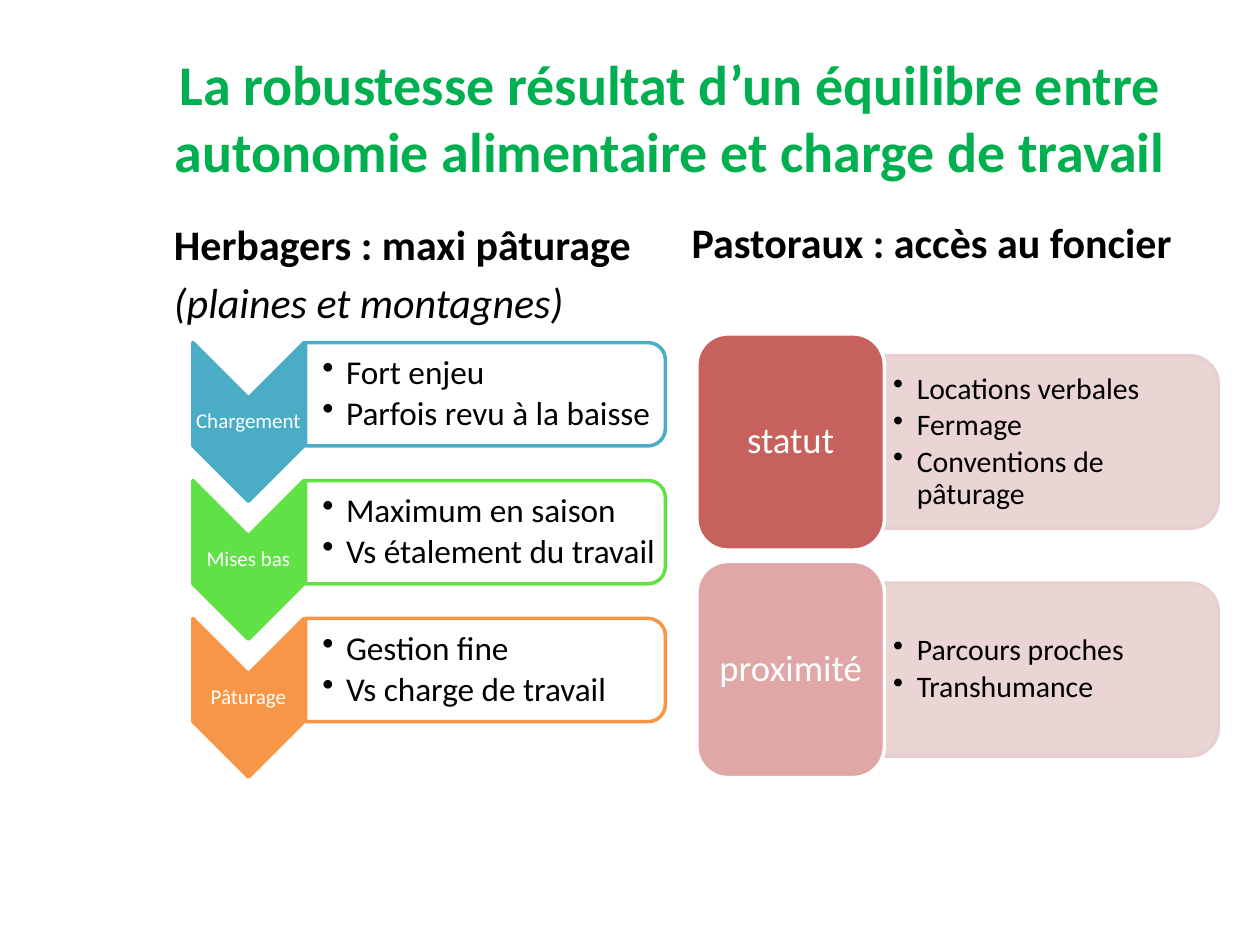
import pptx
import pptx.dml.color
import pptx.enum.shapes
import pptx.enum.text
import pptx.oxml
import pptx.oxml.ns
import pptx.util
from lxml import etree

Pt = pptx.util.Pt
SHAPE = pptx.enum.shapes.MSO_SHAPE
ALIGN = pptx.enum.text.PP_ALIGN
ANCHOR = pptx.enum.text.MSO_ANCHOR

FONT = "Calibri"
COLORS = {
    "title": "00B050", "text": "000000", "white": "FFFFFF",
    "stocking": "4BACC6", "lambing": "60E146", "grazing": "F79646",
    "card": "C0504D", "panel": "E8D0D0",
}
GRAZING_STEPS = [
    ("Chargement", "stocking", ["Fort enjeu", "Parfois revu à la baisse"]),
    ("Mises bas", "lambing", ["Maximum en saison", "Vs étalement du travail"]),
    ("Pâturage", "grazing", ["Gestion fine", "Vs charge de travail"]),
]
LAND_CARDS = [
    ("statut", 90, ["Locations verbales", "Fermage", "Conventions de pâturage"]),
    ("proximité", 50, ["Parcours proches", "Transhumance"]),
]


def rgb(name):
    return pptx.dml.color.RGBColor.from_string(COLORS[name])


def place(shape, left, top, width, height):
    shape.left, shape.top = Pt(left), Pt(top)
    shape.width, shape.height = Pt(width), Pt(height)


def add_run(paragraph, text, size, color, bold=False, italic=False):
    run = paragraph.add_run()
    run.text = text
    font = run.font
    font.name, font.size = FONT, Pt(size)
    font.bold, font.italic = bold, italic
    font.color.rgb = rgb(color)


def set_frame(shape, insets, anchor=ANCHOR.MIDDLE):
    """Turn on wrapping and set left, top, right and bottom insets."""
    frame = shape.text_frame
    frame.word_wrap = True
    frame.auto_size = pptx.enum.text.MSO_AUTO_SIZE.NONE
    frame.vertical_anchor = anchor
    (frame.margin_left, frame.margin_top,
     frame.margin_right, frame.margin_bottom) = [Pt(inset) for inset in insets]
    return frame


def add_block(shapes, kind, box, fill, line, alpha=100, quarter_turn=False):
    """Draw a preset shape that fills the box, even when turned by 90 degrees."""
    left, top, width, height = box
    if quarter_turn:
        shift = (width - height) / 2
        box = (left + shift, top - shift, height, width)
    shape = shapes.add_shape(kind, *[Pt(length) for length in box])
    shape.rotation = 90 if quarter_turn else 0
    shape.shadow.inherit = False
    shape.fill.solid()
    shape.fill.fore_color.rgb = rgb(fill)
    if alpha < 100:
        color = shape.fill._xPr.find(".//" + pptx.oxml.ns.qn("a:srgbClr"))
        etree.SubElement(color, pptx.oxml.ns.qn("a:alpha"), val=str(alpha * 1000))
    shape.line.color.rgb = rgb(line)
    shape.line.width = Pt(2)
    return shape


def write_label(shape, text, size, insets):
    paragraph = set_frame(shape, insets).paragraphs[0]
    paragraph.alignment = ALIGN.CENTER
    paragraph.line_spacing = 0.9
    add_run(paragraph, text, size, "white")


def add_bullets(shapes, box, items, size, insets):
    frame = set_frame(shapes.add_textbox(*[Pt(length) for length in box]), insets)
    for index, item in enumerate(items):
        paragraph = frame.add_paragraph() if index else frame.paragraphs[0]
        properties = paragraph._p.get_or_add_pPr()
        properties.set("marL", str(Pt(13.5)))
        properties.set("indent", str(-Pt(13.5)))
        etree.SubElement(properties, pptx.oxml.ns.qn("a:buChar"), char="•")
        paragraph.line_spacing = 0.9
        paragraph.space_after = Pt(round(size * 0.15, 2))
        add_run(paragraph, item, size, "text")


def fill_title(title):
    place(title, 82, 21.6, 602, 90)
    paragraph = set_frame(title, (7.2, 3.6, 7.2, 3.6)).paragraphs[0]
    paragraph.alignment = ALIGN.CENTER
    add_run(paragraph, "La robustesse résultat d’un équilibre entre "
            "autonomie alimentaire et charge de travail", 32, "title", bold=True)


def fill_heading(placeholder, box, heading, note=None):
    place(placeholder, *box)
    frame = set_frame(placeholder, (7.2, 3.6, 7.2, 3.6), ANCHOR.TOP)
    paragraph = frame.paragraphs[0]
    paragraph.space_before = Pt(0)
    add_run(paragraph, heading, 24, "text", bold=True)
    if note:
        paragraph = frame.add_paragraph()
        paragraph.space_before = Pt(4.8)
        add_run(paragraph, note, 24, "text", italic=True)


def add_grazing_steps(slide, left, top, width):
    """Stack chevrons, each with an outlined list on its right."""
    shapes = slide.shapes.add_group_shape().shapes
    chevron_width, chevron_height, bar_height, pitch = 63.5, 90.7, 59, 78.8
    for index, (label, color, items) in enumerate(GRAZING_STEPS):
        y = top + index * pitch
        add_block(shapes, SHAPE.CHEVRON, (left, y, chevron_width, chevron_height),
                  color, color, quarter_turn=True)
        label_box = shapes.add_textbox(Pt(left), Pt(y + chevron_width / 2),
                                       Pt(chevron_width), Pt(27.2))
        write_label(label_box, label, 12, (0.6, 0.6, 0.6, 0.6))
        bar_left, bar_width = left + chevron_width + 1, width - chevron_width - 1
        add_block(shapes, SHAPE.ROUND_2_SAME_RECTANGLE,
                  (bar_left, y, bar_width, bar_height), "white", color, 90, True)
        add_bullets(shapes, (bar_left - 1, y + 3, bar_width - 3, bar_height - 6),
                    items, 19, (10.6, 0.6, 0.6, 0.6))


def add_land_cards(slide, left, top, width):
    """Stack rounded cards, each with a pale list panel centred on its right."""
    shapes = slide.shapes.add_group_shape().shapes
    card_width, card_height, panel_height, pitch = 107.2, 123.6, 98.8, 130
    for index, (label, alpha, items) in enumerate(LAND_CARDS):
        y = top + index * pitch
        panel_top = y + (card_height - panel_height) / 2
        panel_left, panel_width = left + card_width, width - card_width
        add_block(shapes, SHAPE.ROUND_2_SAME_RECTANGLE,
                  (panel_left, panel_top, panel_width, panel_height),
                  "panel", "panel", 90, True)
        add_bullets(shapes, (panel_left, panel_top + 5, panel_width - 5, panel_height - 10),
                    items, 17, (5, 2.6, 5, 2.6))
        card = add_block(shapes, SHAPE.ROUNDED_RECTANGLE,
                         (left, y, card_width, card_height), "card", "white", alpha)
        write_label(card, label, 21, (5, 3, 5, 3))


def main():
    presentation = pptx.Presentation()
    presentation.slide_width, presentation.slide_height = Pt(720), Pt(540)
    slide = presentation.slides.add_slide(presentation.slide_layouts[4])
    title, left_heading, left_body, right_heading, right_body = slide.placeholders
    for unused in (left_body, right_body):
        unused.element.getparent().remove(unused.element)

    fill_title(title)
    fill_heading(left_heading, (92.2, 121, 306, 36.7),
                 "Herbagers : maxi pâturage", "(plaines et montagnes)")
    fill_heading(right_heading, (388, 120.2, 306, 38.2), "Pastoraux : accès au foncier")
    add_grazing_steps(slide, 110.2, 195.8, 270)
    add_land_cards(slide, 398.2, 190.8, 298)
    presentation.save("out.pptx")


if __name__ == "__main__":
    main()
